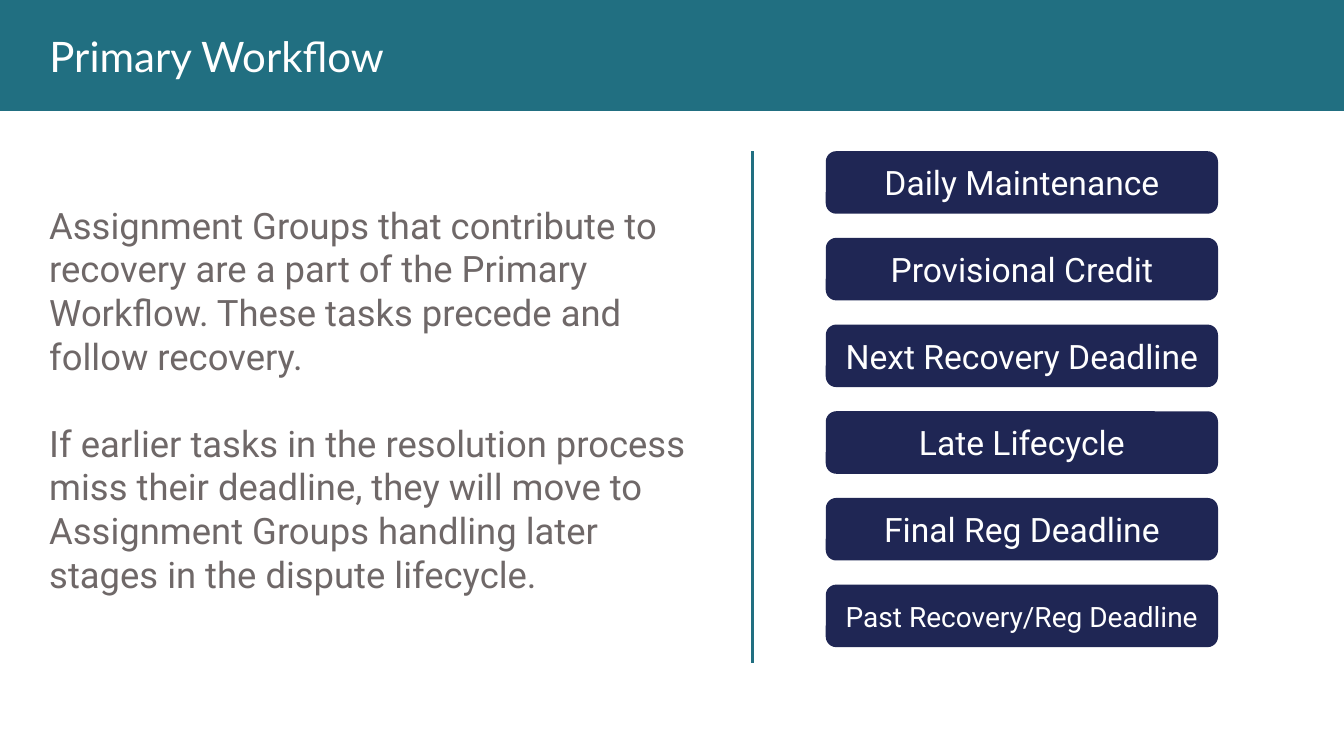
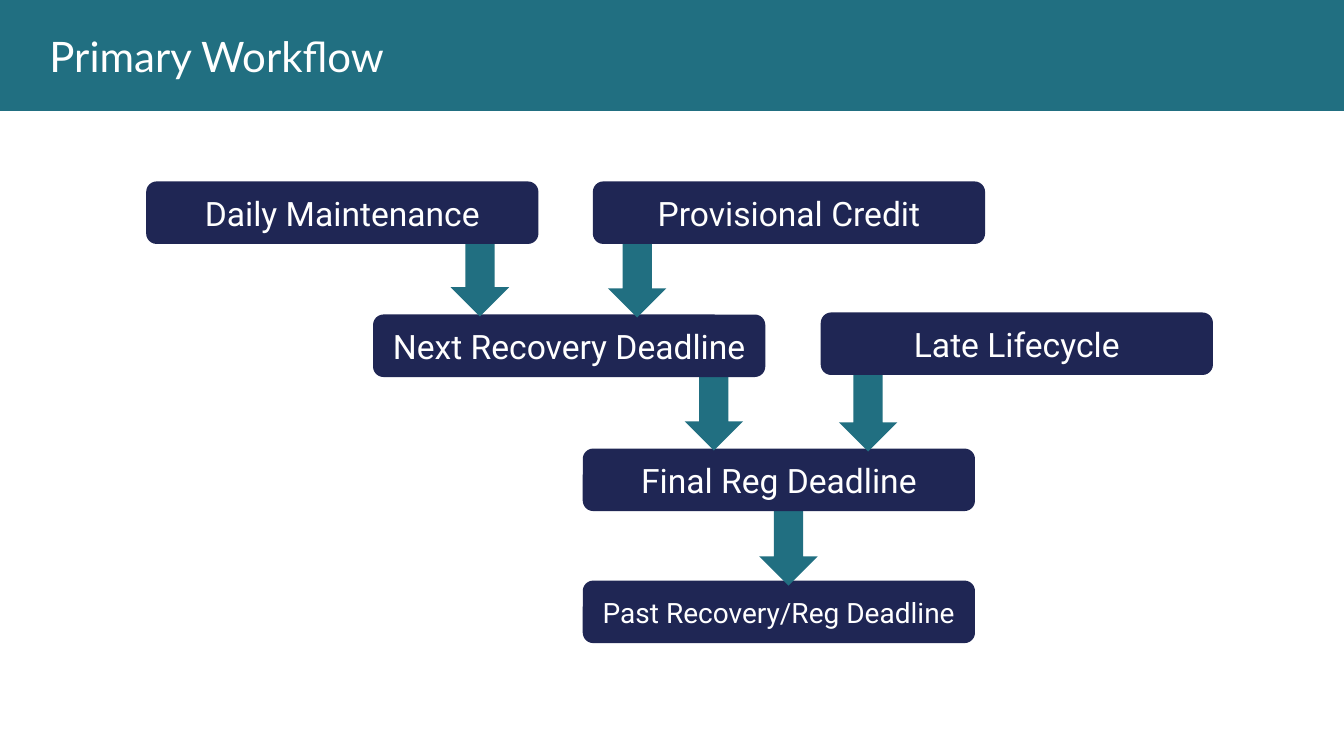
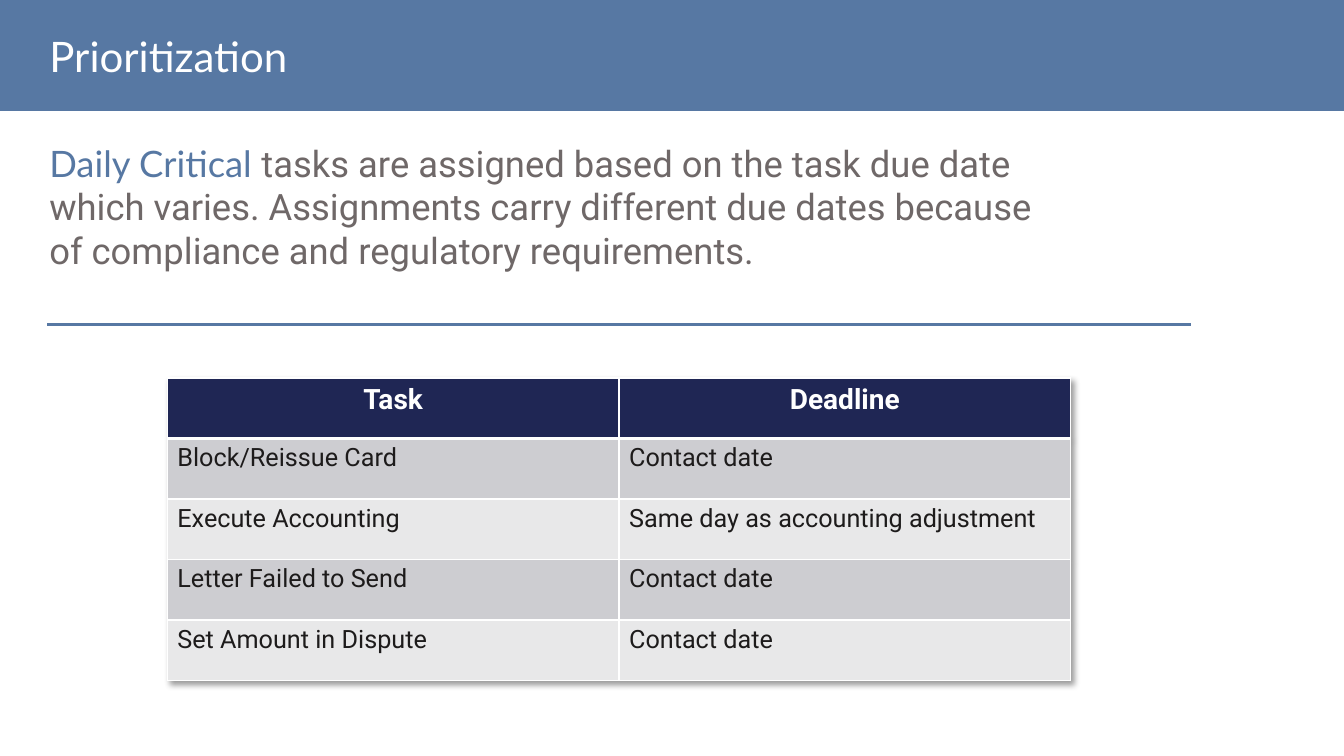
from lxml import etree
from pptx import Presentation
from pptx.dml.color import RGBColor
from pptx.enum.shapes import MSO_CONNECTOR, MSO_SHAPE
from pptx.enum.text import MSO_ANCHOR, MSO_AUTO_SIZE, PP_ALIGN
from pptx.oxml import parse_xml
from pptx.oxml.ns import nsdecls, qn
from pptx.util import Emu, Pt

RECT, ROUND_RECT = MSO_SHAPE.RECTANGLE, MSO_SHAPE.ROUNDED_RECTANGLE
DOWN_ARROW = MSO_SHAPE.DOWN_ARROW
STRAIGHT = MSO_CONNECTOR.STRAIGHT
LEFT, CENTER = PP_ALIGN.LEFT, PP_ALIGN.CENTER
MIDDLE = MSO_ANCHOR.MIDDLE
NO_AUTOFIT = MSO_AUTO_SIZE.NONE

TEAL = RGBColor(0x21, 0x6F, 0x81)
BLUE = RGBColor(0x57, 0x78, 0xA3)
NAVY = RGBColor(0x1F, 0x26, 0x54)
GRAY = RGBColor(0x6F, 0x68, 0x68)
INK = RGBColor(0x1D, 0x1B, 0x1B)
WHITE = RGBColor(0xFF, 0xFF, 0xFF)
ROW_FILLS = RGBColor(0xCD, 0xCD, 0xD1), RGBColor(0xE8, 0xE8, 0xE9)

HEADING_FONT, BODY_FONT = "Lato", "Roboto"
TITLE_ONLY = 5
SLIDE_W, SLIDE_H = 1333, 750
BAND_H = 110
MARGIN = 39
GROUP_W, GROUP_H = 389, 62
ARROW_W = 58

DAILY = "Daily Maintenance"
CREDIT = "Provisional Credit"
NEXT = "Next Recovery Deadline"
LATE = "Late Lifecycle"
FINAL = "Final Reg Deadline"
PAST = "Past Recovery/Reg Deadline"
GROUPS = [DAILY, CREDIT, NEXT, LATE, FINAL, PAST]


def px(n):
    """100 px to the inch."""
    return Emu(n * 9144)


def set_font(font, size, color, name=BODY_FONT, bold=False):
    font.size, font.name, font.bold = Pt(size), name, bold
    font.color.rgb = color


def add_block(slide, kind, x, y, w, h, color):
    sp = slide.shapes.add_shape(kind, px(x), px(y), px(w), px(h))
    sp.shadow.inherit = False
    sp.fill.solid()
    sp.fill.fore_color.rgb = color
    sp.line.fill.background()
    return sp


def add_titled_slide(prs, title, color):
    slide = prs.slides.add_slide(prs.slide_layouts[TITLE_ONLY])
    band = add_block(slide, RECT, 0, 0, SLIDE_W, BAND_H, color)
    sp = slide.shapes.title
    sp._element.addprevious(band._element)
    sp.left, sp.top, sp.width, sp.height = px(MARGIN), px(24), px(1150), px(63)
    tf = sp.text_frame
    tf.text = title
    tf.auto_size = NO_AUTOFIT
    tf.vertical_anchor = MIDDLE
    p = tf.paragraphs[0]
    p.alignment = LEFT
    set_font(p.font, 30, WHITE, HEADING_FONT)
    return slide


def add_body(slide, y, w, h):
    tf = slide.shapes.add_textbox(px(MARGIN), px(y), px(w), px(h)).text_frame
    tf.word_wrap = True
    tf.vertical_anchor = MIDDLE
    return tf


def add_group(slide, name, x, y):
    """Box of one assignment group; the longest name is set smaller."""
    sp = add_block(slide, ROUND_RECT, x, y, GROUP_W, GROUP_H, NAVY)
    tf = sp.text_frame
    tf.margin_left = tf.margin_right = tf.margin_top = tf.margin_bottom = 0
    tf.vertical_anchor = MIDDLE
    tf.text = name
    p = tf.paragraphs[0]
    p.alignment = CENTER
    set_font(p.font, 20 if name == PAST else 24, WHITE)


def add_rule(slide, x1, y1, x2, y2, color):
    line = slide.shapes.add_connector(STRAIGHT, px(x1), px(y1), px(x2), px(y2))
    line.line.color.rgb = color
    line.line.width = Pt(2.25)
    etree.SubElement(line._element.spPr, qn("a:effectLst"))


def set_borders(cell, bottom):
    for side in "LRTB":
        width = Pt(bottom if side == "B" else 1)
        cell._tc.get_or_add_tcPr().append(parse_xml(
            f'<a:ln{side} {nsdecls("a")} w="{width}"><a:solidFill>'
            f'<a:srgbClr val="{WHITE}"/></a:solidFill></a:ln{side}>'))


def add_task_table(slide, rows, x, y, col_w, row_h):
    cols = len(rows[0])
    table = slide.shapes.add_table(len(rows), cols, px(x), px(y),
                                   px(cols * col_w), px(len(rows) * row_h)).table
    table._tbl.tblPr.insert(0, parse_xml(
        f'<a:effectLst {nsdecls("a")}><a:outerShdw blurRad="50800" dist="38100" '
        'dir="2700000" algn="tl" rotWithShape="0"><a:prstClr val="black">'
        '<a:alpha val="40000"/></a:prstClr></a:outerShdw></a:effectLst>'))
    for i, row in enumerate(rows):
        header = i == 0
        for j, text in enumerate(row):
            cell = table.cell(i, j)
            set_borders(cell, 3 if header else 1)
            cell.fill.solid()
            cell.fill.fore_color.rgb = NAVY if header else ROW_FILLS[(i - 1) % 2]
            cell.text = text
            p = cell.text_frame.paragraphs[0]
            p.alignment = CENTER if header else LEFT
            set_font(p.font, 20 if header else 18, WHITE if header else INK,
                     bold=header)


def build_group_list(prs):
    slide = add_titled_slide(prs, "Primary Workflow", TEAL)
    tf = add_body(slide, 194, 653, 404)
    tf.text = (
        "Assignment Groups that contribute to recovery are a part of the Primary "
        "Workflow. These tasks precede and follow recovery.\n"
        "If earlier tasks in the resolution process miss their deadline, they will "
        "move to Assignment Groups handling later stages in the dispute lifecycle.")
    for p in tf.paragraphs:
        set_font(p.font, 26, GRAY)
    tf.paragraphs[1].space_before = Pt(31)
    add_rule(slide, 746, 150, 746, 658, TEAL)
    for i, name in enumerate(GROUPS):
        add_group(slide, name, 819, 150 + i * 86)


def build_flow(prs):
    slide = add_titled_slide(prs, "Primary Workflow", TEAL)
    # Last step first, so that each arrow starts behind its box and ends on the next.
    steps = [  # name, box x, box y, arrow x, arrow tip
        (PAST, 578, 576, None, None),
        (FINAL, 578, 445, 753, 581),
        (NEXT, 370, 312, 679, 447),
        (LATE, 814, 310, 832, 448),
        (DAILY, 145, 180, 447, 314),
        (CREDIT, 588, 180, 603, 315),
    ]
    for name, x, y, arrow_x, tip in steps:
        if tip:
            start = y + GROUP_H - 2
            add_block(slide, DOWN_ARROW, arrow_x, start, ARROW_W, tip - start, TEAL)
        add_group(slide, name, x, y)


def build_prioritization(prs):
    slide = add_titled_slide(prs, "Prioritization", BLUE)
    p = add_body(slide, 134, 999, 141).paragraphs[0]
    for text, color, name in [
        ("Daily Critical ", BLUE, HEADING_FONT),
        ("tasks are assigned based on the task due date which varies. Assignments "
         "carry different due dates because of compliance and regulatory "
         "requirements.", GRAY, BODY_FONT),
    ]:
        r = p.add_run()
        r.text = text
        set_font(r.font, 26, color, name)
    add_task_table(slide, [
        ("Task", "Deadline"),
        ("Block/Reissue Card", "Contact date"),
        ("Execute Accounting", "Same day as accounting adjustment"),
        ("Letter Failed to Send", "Contact date"),
        ("Set Amount in Dispute", "Contact date"),
    ], 166, 375, 448, 60)
    add_rule(slide, 47, 322, 1181, 322, BLUE)


def main():
    prs = Presentation()
    prs.slide_width, prs.slide_height = px(SLIDE_W), px(SLIDE_H)
    build_group_list(prs)
    build_flow(prs)
    build_prioritization(prs)
    prs.save("out.pptx")


if __name__ == "__main__":
    main()
